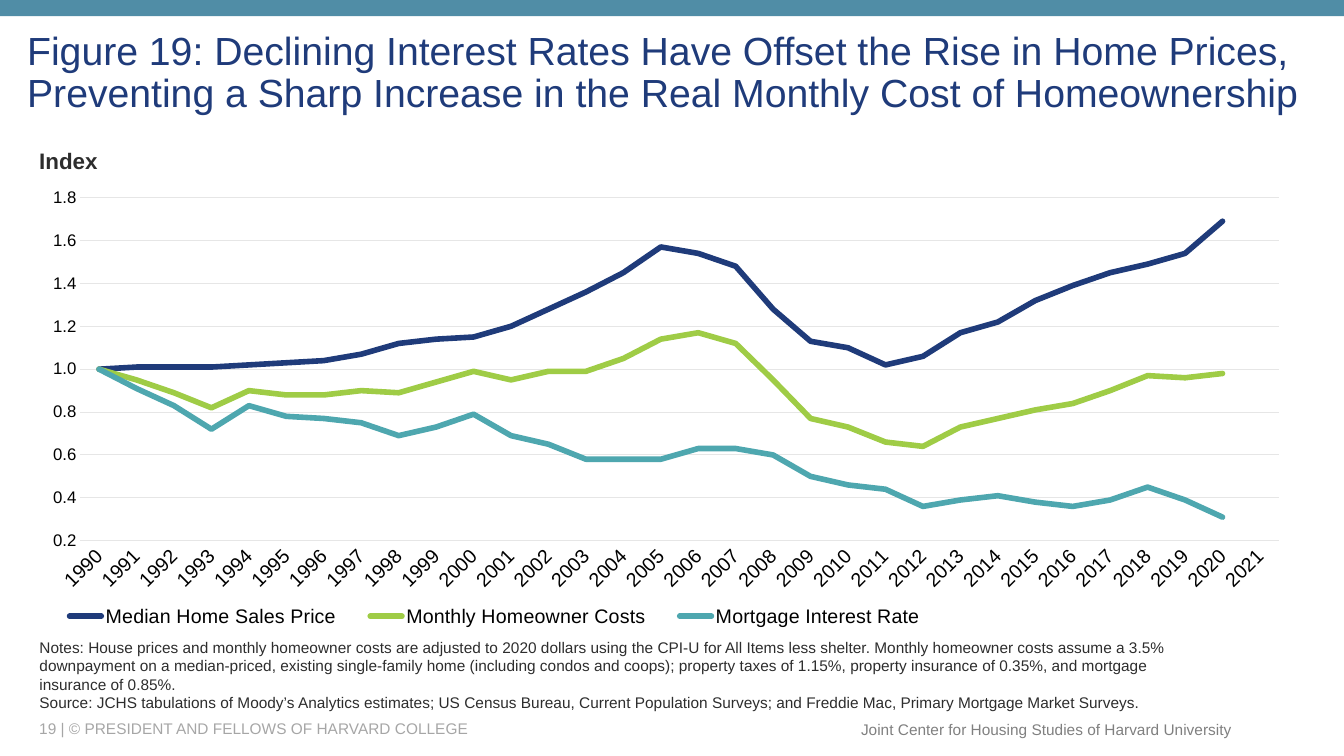
import pptx
import pptx.chart.data
import pptx.dml.color
import pptx.enum.chart
import pptx.enum.shapes
import pptx.enum.text
import pptx.oxml
import pptx.oxml.ns
import pptx.util
from pptx.util import Cm

COLOURS = {
    "navy": "1F3B7A", "green": "9FCC46", "teal": "4EA7AF", "band": "508DA6",
    "ink": "2D2D2D", "black": "000000", "grid": "E6E6E6",
    "copyright": "A6A6A6", "centre": "808080",
}
FONT = "Arial"
ANCHOR = pptx.enum.text.MSO_ANCHOR
ALIGN = pptx.enum.text.PP_ALIGN

YEARS = range(1990, 2022)
INDEX_SERIES = [
    ("Median Home Sales Price", "navy",
     [1, 1.01, 1.01, 1.01, 1.02, 1.03, 1.04, 1.07, 1.12, 1.14, 1.15, 1.2, 1.28, 1.36, 1.45, 1.57,
      1.54, 1.48, 1.28, 1.13, 1.1, 1.02, 1.06, 1.17, 1.22, 1.32, 1.39, 1.45, 1.49, 1.54, 1.69]),
    ("Monthly Homeowner Costs", "green",
     [1, 0.95, 0.89, 0.82, 0.9, 0.88, 0.88, 0.9, 0.89, 0.94, 0.99, 0.95, 0.99, 0.99, 1.05, 1.14,
      1.17, 1.12, 0.95, 0.77, 0.73, 0.66, 0.64, 0.73, 0.77, 0.81, 0.84, 0.9, 0.97, 0.96, 0.98]),
    ("Mortgage Interest Rate", "teal",
     [1, 0.91, 0.83, 0.72, 0.83, 0.78, 0.77, 0.75, 0.69, 0.73, 0.79, 0.69, 0.65, 0.58, 0.58, 0.58,
      0.63, 0.63, 0.6, 0.5, 0.46, 0.44, 0.36, 0.39, 0.41, 0.38, 0.36, 0.39, 0.45, 0.39, 0.31]),
]
TITLE = ("Figure 19: Declining Interest Rates Have Offset the Rise in Home Prices, "
         "Preventing a Sharp Increase in the Real Monthly Cost of Homeownership")
NOTES = [
    "Notes: House prices and monthly homeowner costs are adjusted to 2020 dollars using the CPI-U "
    "for All Items less shelter. Monthly homeowner costs assume a 3.5% downpayment on a "
    "median-priced, existing single-family home (including condos and coops); property taxes of "
    "1.15%, property insurance of 0.35%, and mortgage insurance of 0.85%.",
    "Source: JCHS tabulations of Moody’s Analytics estimates; US Census Bureau, Current Population "
    "Surveys; and Freddie Mac, Primary Mortgage Market Surveys.",
]


def rgb(colour):
    return pptx.dml.color.RGBColor.from_string(COLOURS[colour])


class FigureSlide:
    def __init__(self, presentation):
        self.slide = presentation.slides.add_slide(presentation.slide_layouts[1])

    def style(self, font, size, colour, bold=False):
        font.name = FONT
        font.size = pptx.util.Pt(size)
        font.bold = bold
        font.color.rgb = rgb(colour)

    def set_text(self, shape, texts, size, colour, anchor, align=ALIGN.LEFT, bold=False,
                 wrap=True, line_spacing=1.0):
        frame = shape.text_frame
        frame.text = "\n".join(texts)
        frame.word_wrap = wrap
        frame.auto_size = pptx.enum.text.MSO_AUTO_SIZE.NONE
        frame.vertical_anchor = anchor
        for paragraph in frame.paragraphs:
            paragraph.alignment = align
            paragraph.line_spacing = line_spacing
            paragraph.space_before = pptx.util.Pt(0)
            if shape.is_placeholder:
                properties = paragraph._p.get_or_add_pPr()
                properties.set("marL", "0")
                properties.set("indent", "0")
                properties.append(pptx.oxml.parse_xml(
                    f"<a:buNone {pptx.oxml.ns.nsdecls('a')}/>"))
            self.style(paragraph.font, size, colour, bold)

    def placeholder(self, index, box, texts, size, colour, **options):
        holder = self.slide.placeholders[index]
        holder.left, holder.top, holder.width, holder.height = map(Cm, box)
        self.set_text(holder, texts, size, colour, ANCHOR.BOTTOM, **options)

    def label(self, box, text, size, colour, anchor=ANCHOR.MIDDLE, **options):
        textbox = self.slide.shapes.add_textbox(*map(Cm, box))
        self.set_text(textbox, [text], size, colour, anchor, **options)

    def band(self, box, colour):
        bar = self.slide.shapes.add_shape(
            pptx.enum.shapes.MSO_SHAPE.RECTANGLE, *map(Cm, box))
        bar.shadow.inherit = False
        bar.fill.solid()
        bar.fill.fore_color.rgb = rgb(colour)
        bar.line.fill.background()

    def place(self, part, left, top, width, height, target=""):
        for old in part.findall(pptx.oxml.ns.qn("c:layout")):
            part.remove(old)
        layout = pptx.oxml.parse_xml(
            f"<c:layout {pptx.oxml.ns.nsdecls('c')}><c:manualLayout>{target}"
            '<c:xMode val="edge"/><c:yMode val="edge"/>'
            f'<c:x val="{left}"/><c:y val="{top}"/><c:w val="{width}"/><c:h val="{height}"/>'
            "</c:manualLayout></c:layout>")
        follower = part.find(pptx.oxml.ns.qn("c:overlay"))
        part.insert(0 if follower is None else part.index(follower), layout)

    def line_chart(self, box, years, series):
        data = pptx.chart.data.CategoryChartData(number_format="0.00")
        data.categories = [str(year) for year in years]
        for name, _, values in series:
            data.add_series(name, values + [None] * (len(years) - len(values)))
        chart = self.slide.shapes.add_chart(
            pptx.enum.chart.XL_CHART_TYPE.LINE, *map(Cm, box), data).chart
        chart.has_title = False
        self.style(chart.font, 10, "black")
        chart.plots[0].vary_by_categories = False
        for line, (_, colour, _) in zip(chart.plots[0].series, series):
            line.smooth = False
            line.format.line.width = pptx.util.Pt(4)
            line.format.line.color.rgb = rgb(colour)
            line.format.line._get_or_add_ln().set("cap", "rnd")

        year_axis, index_axis = chart.category_axis, chart.value_axis
        for axis, size in ((year_axis, 14), (index_axis, 12)):
            axis.major_tick_mark = axis.minor_tick_mark = pptx.enum.chart.XL_TICK_MARK.NONE
            self.style(axis.tick_labels.font, size, "black")
        year_axis._element.txPr.bodyPr.set("rot", "-2700000")
        index_axis.minimum_scale, index_axis.maximum_scale = 0.2, 1.8
        index_axis.major_unit = 0.2
        index_axis.tick_labels.number_format = "#,##0.0"
        index_axis.tick_labels.number_format_is_linked = False
        index_axis.format.line.fill.background()
        for rule in (year_axis.format.line, index_axis.major_gridlines.format.line):
            rule.color.rgb = rgb("grid")
            rule.width = pptx.util.Pt(0.75)

        chart.has_legend = True
        chart.legend.position = pptx.enum.chart.XL_LEGEND_POSITION.BOTTOM
        chart.legend.include_in_layout = False
        self.style(chart.legend.font, 14, "black")
        self.place(chart.legend._element, 0.01, 0.92, 0.71, 0.07)
        self.place(chart._chartSpace.chart.plotArea, 0.04, 0.04, 0.94, 0.75,
                   '<c:layoutTarget val="inner"/>')


def main():
    presentation = pptx.Presentation()
    presentation.slide_width, presentation.slide_height = Cm(33.87), Cm(19.05)
    figure = FigureSlide(presentation)
    figure.band((0, 0, 33.87, 0.41), "band")
    figure.placeholder(0, (0.43, 1.14, 33.02, 1.91), [TITLE], 28, "navy", line_spacing=0.9)
    figure.label((0.74, 3.58, 2.51, 0.94), "Index", 16, "ink", anchor=ANCHOR.TOP, bold=True)
    figure.line_chart((0.74, 4.52, 32.13, 11.53), YEARS, INDEX_SERIES)
    figure.placeholder(1, (0.74, 16.59, 29.85, 1.47), NOTES, 11, "ink")
    figure.label((0.74, 18.11, 20.12, 0.51),
                 "19 | © PRESIDENT AND FELLOWS OF HARVARD COLLEGE", 11, "copyright")
    figure.label((21.39, 18.01, 9.91, 0.74),
                 "Joint Center for Housing Studies of Harvard University", 11, "centre",
                 align=ALIGN.RIGHT, wrap=False)
    presentation.save("out.pptx")


if __name__ == "__main__":
    main()
